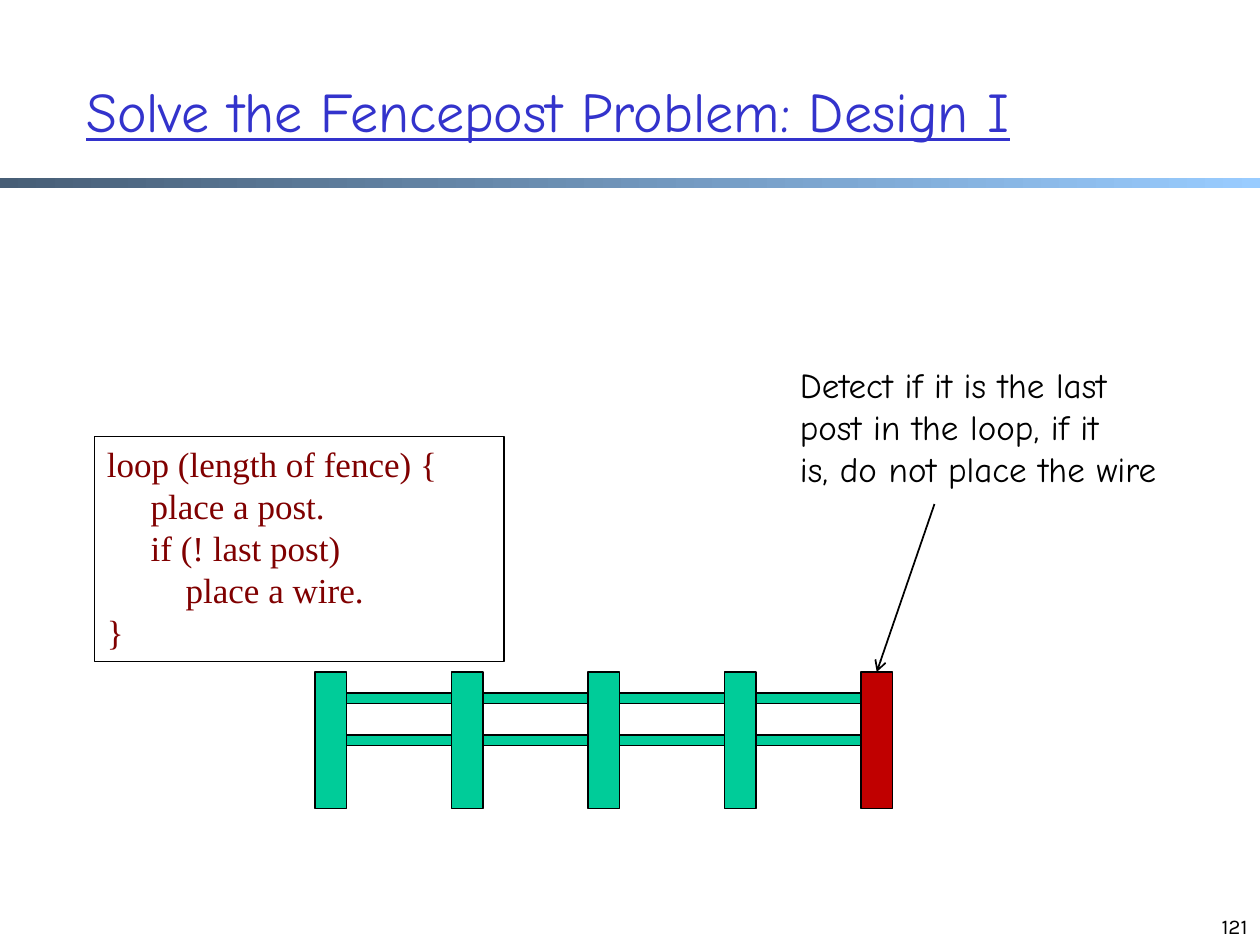
from dataclasses import dataclass

from lxml.etree import SubElement
from pptx import Presentation
from pptx.dml.color import RGBColor
from pptx.enum.shapes import MSO_CONNECTOR as Connector, MSO_SHAPE as Shape
from pptx.enum.text import MSO_ANCHOR as Anchor, MSO_AUTO_SIZE as AutoSize, PP_ALIGN as Align
from pptx.oxml.ns import qn
from pptx.slide import Slide
from pptx.util import Pt

BLACK = RGBColor(0x00, 0x00, 0x00)
BLUE = RGBColor(0x33, 0x33, 0xCC)
GREEN = RGBColor(0x00, 0xCC, 0x99)
RED = RGBColor(0xC0, 0x00, 0x00)
MAROON = RGBColor(0x80, 0x00, 0x00)
SLATE = RGBColor(0x47, 0x5E, 0x76)
SKY = RGBColor(0x99, 0xCC, 0xFF)


@dataclass
class SlideBuilder:
    page: Slide
    hand_font: str = "Comic Neue"
    code_font: str = "Times New Roman"
    number_font: str = "Karla"
    outline: float = 0.75

    def fill_text(self, box, lines, font, anchor=Anchor.TOP, align=Align.LEFT, spacing=None):
        """Fill a box with (indent, text) paragraphs in one style."""
        frame = box.text_frame
        settings = {"word_wrap": True, "auto_size": AutoSize.NONE, "vertical_anchor": anchor,
                    "margin_left": Pt(7.2), "margin_right": Pt(7.2),
                    "margin_top": Pt(3.6), "margin_bottom": Pt(3.6)}
        for name, value in settings.items():
            setattr(frame, name, value)
        for index, (indent, text) in enumerate(lines):
            para = frame.add_paragraph() if index else frame.paragraphs[0]
            para.text = text
            para.alignment = align
            if spacing:
                para.line_spacing = Pt(spacing)
            if indent:
                para._p.get_or_add_pPr().set("marL", str(Pt(indent)))
            for span in para.runs:
                for name, value in font.items():
                    if name == "color":
                        span.font.color.rgb = value
                    else:
                        setattr(span.font, name, value)

    def font(self, name, size, color, **extra):
        return {"name": name, "size": Pt(size), "color": color, **extra}

    def title(self, text, left, top, width, height):
        box = self.page.shapes.title
        places = {"left": left, "top": top, "width": width, "height": height}
        for name, value in places.items():
            setattr(box, name, Pt(value))
        self.fill_text(box, [(0, text)], self.font(self.hand_font, 32, BLUE, underline=True),
                       Anchor.MIDDLE)

    def text(self, lines, left, top, width, height, font, **layout):
        box = self.page.shapes.add_textbox(Pt(left), Pt(top), Pt(width), Pt(height))
        self.fill_text(box, lines, font, **layout)

    def rectangle(self, left, top, width, height, fill=None, outlined=True):
        box = self.page.shapes.add_shape(Shape.RECTANGLE, Pt(left), Pt(top), Pt(width), Pt(height))
        box.shadow.inherit = False
        if fill is None:
            box.fill.background()
        else:
            box.fill.solid()
            box.fill.fore_color.rgb = fill
        if outlined:
            box.line.color.rgb = BLACK
            box.line.width = Pt(self.outline)
        else:
            box.line.fill.background()
        return box

    def gradient_bar(self, left, top, width, height, colors):
        bar = self.rectangle(left, top, width, height, outlined=False)
        bar.fill.gradient()
        bar.fill.gradient_angle = 0
        for stop, position, color in zip(bar.fill.gradient_stops, (0, 1), colors):
            stop.position = position
            stop.color.rgb = color

    def arrow(self, start, end):
        line = self.page.shapes.add_connector(Connector.STRAIGHT, *map(Pt, start + end))
        line.line.color.rgb = BLACK
        line.line.width = Pt(1)
        properties = line._element.spPr
        SubElement(properties.find(qn("a:ln")), qn("a:tailEnd"), type="arrow")
        SubElement(properties, qn("a:effectLst"))


def main():
    deck = Presentation()
    deck.slide_width, deck.slide_height = Pt(720), Pt(540)
    slide = SlideBuilder(deck.slides.add_slide(deck.slide_layouts[5]))

    # Heading
    slide.gradient_bar(0, 101.5, 720, 6, (SLATE, SKY))
    slide.title("Solve the Fencepost Problem: Design I", 42, 18, 612, 90)

    # Fence: each post but the last is followed by two rails
    posts, fence_left, fence_top = 5, 180, 384
    post_width, post_height, rail_width, rail_height = 18, 78, 60, 6
    for index in range(posts):
        left = fence_left + index * (post_width + rail_width)
        last = index == posts - 1
        slide.rectangle(left, fence_top, post_width, post_height, RED if last else GREEN)
        if not last:
            for drop in (12, 36):
                slide.rectangle(left + post_width, fence_top + drop,
                                rail_width, rail_height, GREEN)

    # Pseudocode
    code_box = slide.rectangle(54, 249.5, 234, 128.5)
    code = [(0, "loop (length of fence) {"), (25, "place a post."), (25, "if (! last post)"),
            (45, "place a wire."), (0, "}")]
    slide.fill_text(code_box, code, slide.font(slide.code_font, 20, MAROON), spacing=24)

    # Note pointing at the last post
    slide.arrow((534, 288), (501, fence_top))
    note = "Detect if it is the last\vpost in the loop, if it\vis, do not place the wire"
    slide.text([(0, note)], 450, 204, 240, 80, slide.font(slide.hand_font, 20, BLACK), spacing=24)

    # Slide number
    slide.text([(0, "121")], 552, 504, 168, 36, slide.font(slide.number_font, 12, BLACK),
               anchor=Anchor.BOTTOM, align=Align.RIGHT)

    deck.save("out.pptx")


if __name__ == "__main__":
    main()
